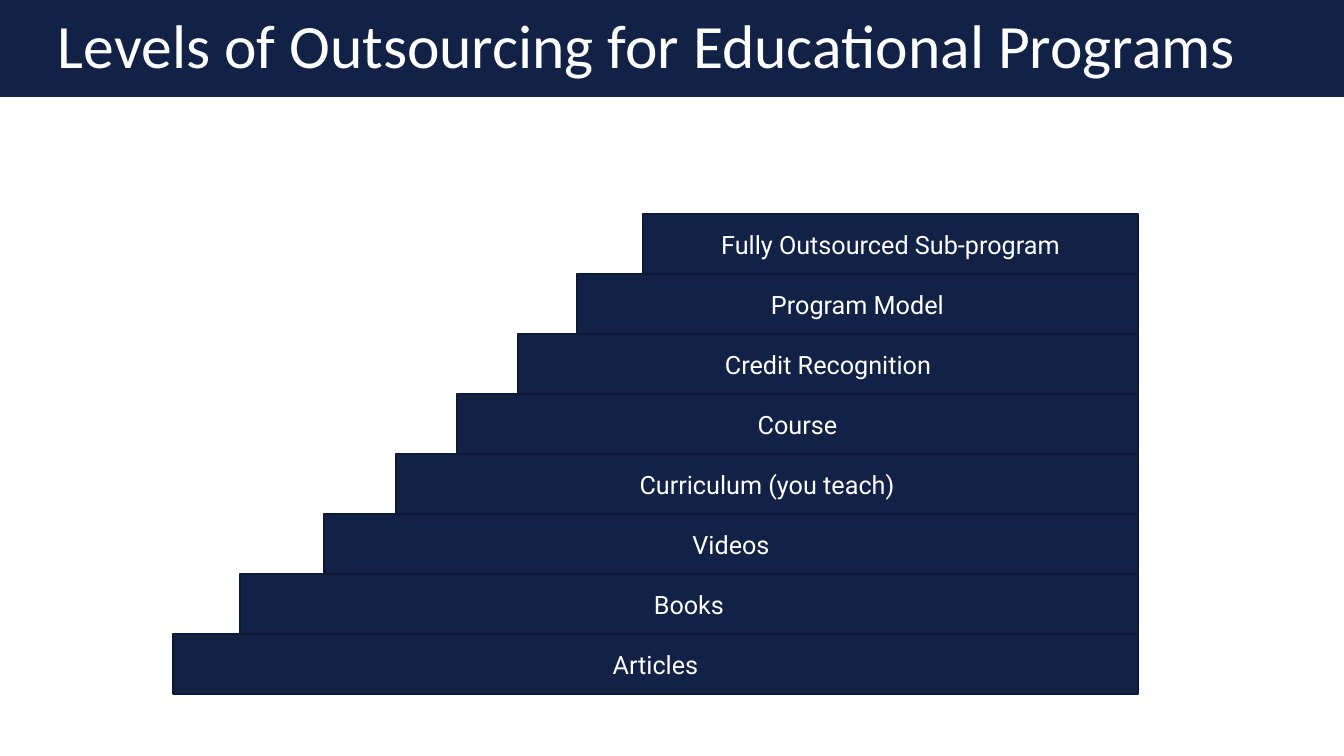
from pptx import Presentation
from pptx.dml.color import RGBColor
from pptx.enum.shapes import MSO_SHAPE
from pptx.enum.text import MSO_ANCHOR, PP_ALIGN
from pptx.util import Pt

RECTANGLE = MSO_SHAPE.RECTANGLE
MIDDLE = MSO_ANCHOR.MIDDLE
LEFT, CENTER = PP_ALIGN.LEFT, PP_ALIGN.CENTER

EMU_PER_PX = 914400 / 100.8
SLIDE_WIDTH, SLIDE_HEIGHT = 1344, 756
COLORS = {"navy": "122146", "edge": "0D1834", "white": "FFFFFF"}

# Each level with the left edge of its step, from the top down
LEVELS = [
    ("Fully Outsourced Sub-program", 643),
    ("Program Model", 577),
    ("Credit Recognition", 518),
    ("Course", 457),
    ("Curriculum (you teach)", 396),
    ("Videos", 324),
    ("Books", 240),
    ("Articles", 173),
]


def px(length):
    return round(length * EMU_PER_PX)


def color(name):
    return RGBColor.from_string(COLORS[name])


def add_bar(slide, left, top, width, height):
    bar = slide.shapes.add_shape(RECTANGLE, px(left), px(top), px(width), px(height))
    bar.shadow.inherit = False
    bar.fill.solid()
    bar.fill.fore_color.rgb = color("navy")
    bar.line.fill.background()
    return bar


def write(shape, text, font_name, size, alignment):
    frame = shape.text_frame
    frame.word_wrap = True
    frame.vertical_anchor = MIDDLE
    frame.text = text
    paragraph = frame.paragraphs[0]
    paragraph.alignment = alignment
    font = paragraph.runs[0].font
    font.name = font_name
    font.size = Pt(size)
    font.color.rgb = color("white")
    return paragraph


def add_header(slide, left, top, width, height):
    add_bar(slide, left, top, width, height)
    title = slide.shapes.add_textbox(
        px(left + 48), px(top + 11), px(width - 108), px(height - 22))
    heading = write(title, "Levels of Outsourcing for Educational Programs",
                    "Calibri", 44, LEFT)
    heading.line_spacing = 0.9


def add_staircase(slide, top, right, step_height):
    """Stack the levels as steps that share one right edge."""
    for row, (level, left) in enumerate(LEVELS):
        step = add_bar(slide, left, top + row * step_height, right - left, step_height)
        step.line.color.rgb = color("edge")
        step.line.width = Pt(1)
        write(step, level, "Roboto", 18, CENTER)


def main():
    deck = Presentation()
    deck.slide_width, deck.slide_height = px(SLIDE_WIDTH), px(SLIDE_HEIGHT)
    slide = deck.slides.add_slide(deck.slide_layouts[6])
    add_header(slide, 0, 0, SLIDE_WIDTH, 97)
    add_staircase(slide, top=214, right=1138, step_height=60)
    deck.save("out.pptx")


if __name__ == "__main__":
    main()
